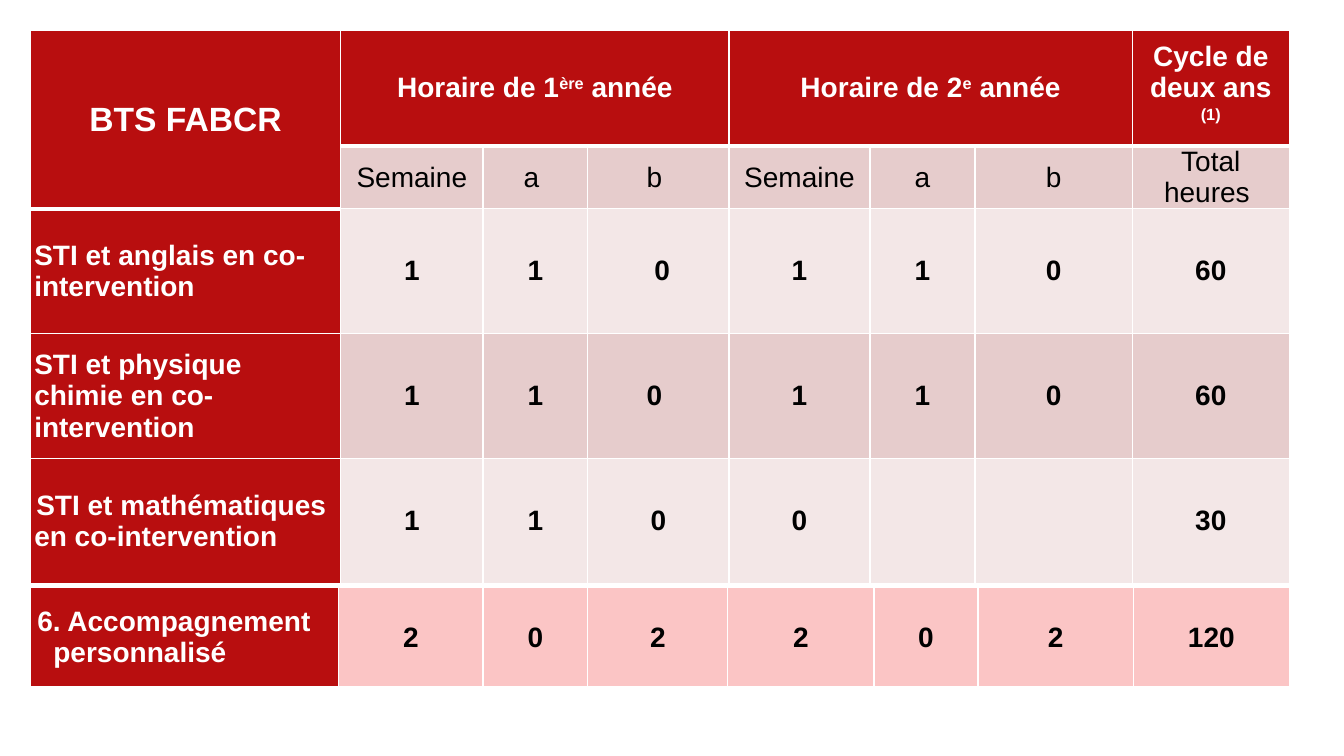
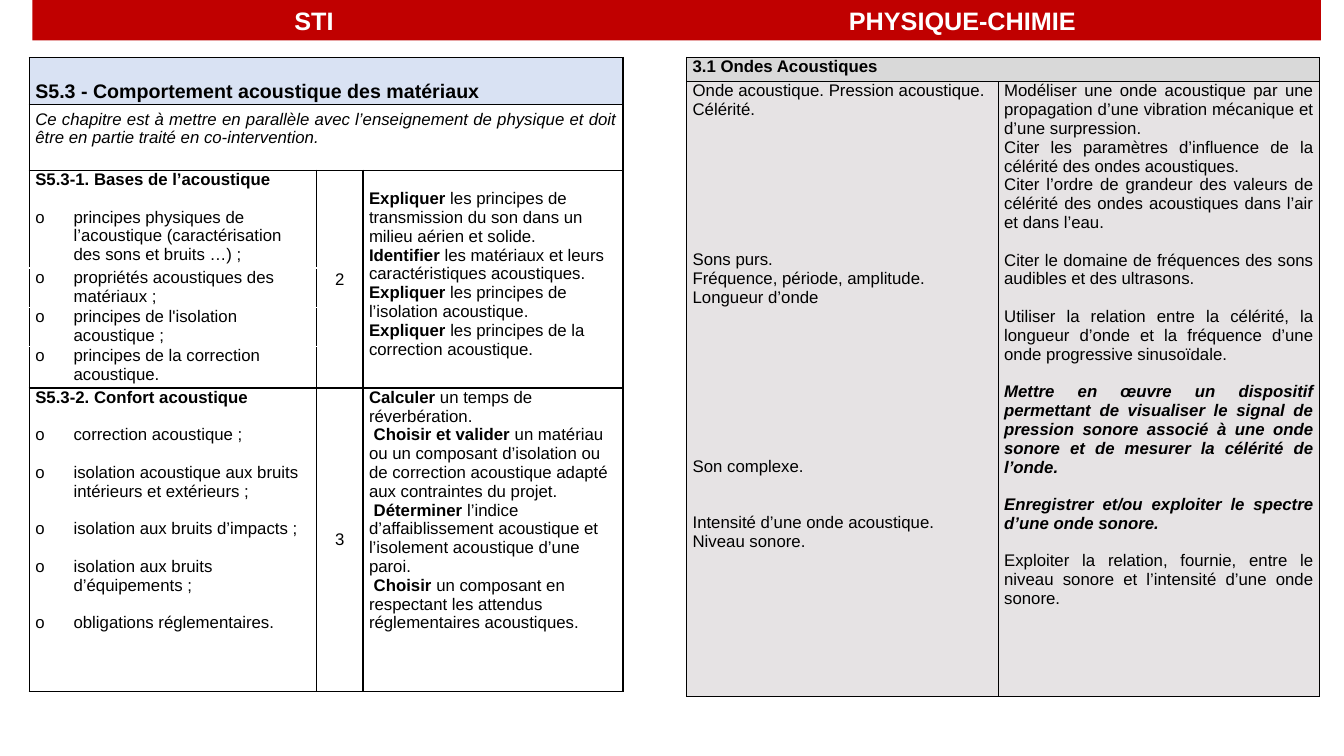
from dataclasses import dataclass, field
from typing import Optional

from lxml.etree import SubElement
from pptx import Presentation
from pptx.dml.color import RGBColor
from pptx.enum.text import MSO_ANCHOR, MSO_AUTO_SIZE, PP_ALIGN
from pptx.oxml.ns import qn
from pptx.util import Emu, Pt

PX = 9144  # EMU per px, 100 px to the inch
LEFT, CENTER, JUSTIFY = PP_ALIGN.LEFT, PP_ALIGN.CENTER, PP_ALIGN.JUSTIFY
TOP, MIDDLE, BOTTOM = MSO_ANCHOR.TOP, MSO_ANCHOR.MIDDLE, MSO_ANCHOR.BOTTOM


@dataclass(frozen=True)
class Theme:
    font: str = "Arial"
    white: str = "FFFFFF"
    black: str = "000000"
    band: str = "C00000"
    red: str = "B80E0F"
    rose: str = "E6CCCC"
    pale: str = "F3E7E7"
    pink: str = "FBC5C5"
    blue: str = "D9E2F3"
    grey: str = "D9D9D9"
    light: str = "E6E3E4"
    body: int = 12
    chapter: int = 14
    title: int = 18
    hours: int = 20
    course: int = 24
    line: float = 1.117  # line height of the font, in ems


T = Theme()


@dataclass
class Run:
    text: str
    bold: bool = False
    italic: bool = False
    raised: bool = False


@dataclass
class Para:
    runs: list[Run]
    gap: int = 0  # lines of space before
    margin: int = 0
    indent: int = 0
    bullet: str = ""


@dataclass
class Cell:
    paras: list[Para] = field(default_factory=list)
    fill: str = T.white
    color: str = T.black
    size: int = T.body
    align: PP_ALIGN = LEFT
    anchor: MSO_ANCHOR = TOP
    pad_top: int = 0
    pad_bottom: int = 0
    span: tuple[int, int] = (1, 1)
    edges: dict[str, tuple[str, int]] = field(default_factory=dict)


@dataclass
class Grid:
    left: int
    top: int
    cols: list[int]
    rows: list[int]
    cells: list[list[Optional[Cell]]]
    pad: int
    border: str


def px(n: int) -> Emu:
    return Emu(n * PX)


def rich(text: str, gap: int = 0, italic: bool = False) -> Para:
    """Text between asterisks is bold."""
    parts = text.split("*")
    return Para([Run(t, n % 2 == 1, italic) for n, t in enumerate(parts) if t], gap)


def item(text: str, gap: int = 0) -> Para:
    return Para([Run(text)], gap, 38, -38, "o")


# Drawing
def style_run(r, run: Run, size: int, color: str) -> None:
    r.text = run.text
    f = r.font
    f.name, f.size, f.bold, f.italic = T.font, Pt(size), run.bold, run.italic
    f.color.rgb = RGBColor.from_string(color)
    if run.raised:
        r._r.get_or_add_rPr().set("baseline", "30000")


def write(tf, cell: Cell) -> None:
    for n, para in enumerate(cell.paras):
        p = tf.paragraphs[0] if n == 0 else tf.add_paragraph()
        p.alignment = cell.align
        p.space_before = Pt(round(para.gap * cell.size * T.line, 1))
        pPr = p._p.get_or_add_pPr()
        pPr.set("marL", str(px(para.margin)))
        pPr.set("indent", str(px(para.indent)))
        if para.bullet:
            SubElement(pPr, qn("a:buFont")).set("typeface", T.font)
            SubElement(pPr, qn("a:buChar")).set("char", para.bullet)
        for run in para.runs:
            style_run(p.add_run(), run, cell.size, cell.color)


def draw_edges(tc, cell: Cell, color: str) -> None:
    tcPr = tc._tc.get_or_add_tcPr()
    for side in "LRTB":
        shade, width = cell.edges.get(side, (color, 1))
        ln = SubElement(tcPr, qn(f"a:ln{side}"), w=str(Pt(width)))
        SubElement(SubElement(ln, qn("a:solidFill")), qn("a:srgbClr")).set("val", shade)


def style_cell(tc, cell: Cell, grid: Grid) -> None:
    tc.margin_left = tc.margin_right = px(grid.pad)
    tc.margin_top, tc.margin_bottom = px(cell.pad_top), px(cell.pad_bottom)
    tc.vertical_anchor = cell.anchor
    draw_edges(tc, cell, grid.border)
    tc.fill.solid()
    tc.fill.fore_color.rgb = RGBColor.from_string(cell.fill)


def draw_grid(s, grid: Grid) -> None:
    frame = s.shapes.add_table(len(grid.rows), len(grid.cols), px(grid.left), px(grid.top),
                               px(sum(grid.cols)), px(sum(grid.rows)))
    table = frame.table
    table.first_row = table.horz_banding = False
    for col, width in zip(table.columns, grid.cols):
        col.width = px(width)
    for row, height in zip(table.rows, grid.rows):
        row.height = px(height)
    for y, line in enumerate(grid.cells):
        for x, cell in enumerate(line):
            if cell is None:
                continue
            down, across = cell.span
            for dy in range(down):
                for dx in range(across):
                    tc = table.cell(y + dy, x + dx)
                    style_cell(tc, cell, grid)
                    if dy or dx or not cell.paras:
                        end = SubElement(tc.text_frame.paragraphs[0]._p, qn("a:endParaRPr"))
                        end.set("sz", str(cell.size * 100))
            if cell.span != (1, 1):
                table.cell(y, x).merge(table.cell(y + down - 1, x + across - 1))
            write(table.cell(y, x).text_frame, cell)


def draw_title(s, text: str, tabs: list[int]) -> None:
    sp = s.shapes.title
    sp.left, sp.top, sp.width, sp.height = px(32), px(0), px(1278), px(40)
    sp.fill.solid()
    sp.fill.fore_color.rgb = RGBColor.from_string(T.band)
    tf = sp.text_frame
    tf.word_wrap, tf.auto_size, tf.vertical_anchor = True, MSO_AUTO_SIZE.NONE, MIDDLE
    p = tf.paragraphs[0]
    p.alignment = LEFT
    stops = SubElement(p._p.get_or_add_pPr(), qn("a:tabLst"))
    for pos in tabs:
        SubElement(stops, qn("a:tab"), pos=str(px(pos)), algn="l")
    style_run(p.add_run(), Run(text, bold=True), T.title, T.white)


# Slide 1: weekly hours
def head(paras: list[Para], size: int = T.hours, span: tuple[int, int] = (1, 1)) -> Cell:
    return Cell(paras, T.red, T.white, size, CENTER, MIDDLE, span=span,
                edges={"B": (T.white, 3)})


def year(number: str, suffix: str) -> Cell:
    return head([Para([Run(f"Horaire de {number}", True), Run(suffix, True, raised=True),
                       Run(" année", True)])], span=(1, 3))


def hours(text: str, fill: str, bold: bool = True) -> Cell:
    paras = [Para([Run(text, bold)])] if text else []
    return Cell(paras, fill, size=T.hours, align=CENTER, anchor=MIDDLE)


def subject(text: str, margin: int = 0, indent: int = 0) -> Cell:
    return Cell([Para([Run(text, True)], 0, margin, indent)], T.red, T.white, T.hours,
                anchor=MIDDLE)


def hours_row(label: Cell, values: list[str], fill: str) -> list[Optional[Cell]]:
    return [label] + [hours(v, fill) for v in values]


def hours_slide(prs) -> None:
    s = prs.slides.add_slide(prs.slide_layouts[6])
    cycle = head([rich("*Cycle de deux ans*"), Para([Run("(1)", True, raised=True)])])
    units = ["Semaine", "a ", "b ", "Semaine", "a", "b", "Total heures "]
    cells = [
        [head([rich("*BTS FABCR*")], T.course, (2, 1)),
         year("1", "ère"), None, None, year("2", "e"), None, None, cycle],
        [None] + [hours(u, T.rose, False) for u in units],
        hours_row(subject("STI et anglais en co-intervention"),
                  ["1", "1", " 0", "1", "1", "0", "60"], T.pale),
        hours_row(subject("STI et physique chimie en co-intervention"),
                  ["1", "1", "0 ", "1", "1", "0", "60"], T.rose),
        hours_row(subject("STI et mathématiques en co-intervention", indent=2),
                  ["1", "1", "0", "0", "", "", "30"], T.pale),
    ]
    draw_grid(s, Grid(30, 30, [308, 141, 104, 140, 140, 104, 156, 156],
                      [115, 61, 124, 124, 124], cells, 4, T.white))
    support = hours_row(subject("6. Accompagnement personnalisé", 16, -16),
                        ["2", "0", "2", "2", "0", "2", "120"], T.pink)
    for cell in support:
        cell.edges = {"B": (T.white, 3)}
    draw_grid(s, Grid(30, 583, [306, 143, 104, 139, 145, 103, 154, 155], [99],
                      [support], 7, T.white))


# Slide 2: the two syllabuses side by side
def syllabus_slide(prs) -> None:
    s = prs.slides.add_slide(prs.slide_layouts[5])
    draw_title(s, "\tSTI\tPHYSIQUE-CHIMIE", [250, 800])

    hidden = (T.white, 1)
    basics = [
        [rich("*S5.3-1. Bases de l’acoustique*"),
         item("principes physiques de l’acoustique (caractérisation des sons et bruits …) ;", 1)],
        [item("propriétés acoustiques des matériaux ;")],
        [item("principes de l'isolation acoustique ;")],
        [item("principes de la correction acoustique.")],
    ]
    topics = []
    for n, paras in enumerate(basics):
        edges = {"T": hidden} if n else {}
        if n < len(basics) - 1:
            edges["B"] = hidden
        topics.append(Cell(paras, edges=edges))
    basics_skills = Cell([
        rich("*Expliquer* les principes de transmission du son dans un milieu aérien et solide."),
        rich("*Identifier *les matériaux et leurs caractéristiques acoustiques."),
        rich("*Expliquer* les principes de l’isolation acoustique."),
        rich("*Expliquer *les principes de la correction acoustique."),
    ], pad_top=19, span=(4, 1))
    comfort = Cell([rich("*S5.3-2. Confort acoustique*")] + [item(t, 1) for t in (
        "correction acoustique ;",
        "isolation acoustique aux bruits intérieurs et extérieurs ;",
        "isolation aux bruits d’impacts ;",
        "isolation aux bruits d’équipements ;",
        "obligations réglementaires.")])
    comfort_skills = Cell([
        rich("*Calculer *un temps de réverbération."),
        rich(" *Choisir et valider *un matériau ou un composant d’isolation ou de correction "
             "acoustique adapté aux contraintes du projet."),
        rich(" *Déterminer *l’indice d’affaiblissement acoustique et l’isolement acoustique "
             "d’une paroi."),
        rich(" *Choisir *un composant en respectant les attendus réglementaires acoustiques."),
    ])
    chapter = Cell([rich("*S5.3 - Comportement acoustique des matériaux*")], T.blue,
                   size=T.chapter, anchor=BOTTOM, pad_bottom=2, span=(1, 3))
    intro = Cell([rich("Ce chapitre est à mettre en parallèle avec l’enseignement de physique et "
                       "doit être en partie traité en co-intervention.", italic=True)],
                 align=JUSTIFY, pad_top=5, span=(1, 3))

    def level(text: str, rows: int) -> Cell:
        return Cell([rich(text)], align=CENTER, anchor=MIDDLE, span=(rows, 1))

    cells = [[chapter, None, None], [intro, None, None],
             [topics[0], level("2", 4), basics_skills],
             *[[topic, None, None] for topic in topics[1:]],
             [comfort, level("3", 1), comfort_skills]]
    draw_grid(s, Grid(29, 57, [285, 46, 258], [47, 65, 97, 39, 39, 41, 301],
                      cells, 6, T.black))

    notions = Cell([
        rich("Onde acoustique. Pression acoustique."),
        rich("Célérité."),
        rich("Sons purs.", 7),
        rich("Fréquence, période, amplitude."),
        rich("Longueur d’onde"),
        rich("Son complexe.", 8),
        rich("Intensité d’une onde acoustique.", 2),
        rich("Niveau sonore."),
    ], T.light)
    abilities = Cell([
        rich("Modéliser une onde acoustique par une propagation d’une vibration mécanique et "
             "d’une surpression."),
        rich("Citer les paramètres d’influence de la célérité des ondes acoustiques."),
        rich("Citer l’ordre de grandeur des valeurs de célérité des ondes acoustiques dans l’air "
             "et dans l’eau."),
        rich("Citer le domaine de fréquences des sons audibles et des ultrasons.", 1),
        rich("Utiliser la relation entre la célérité, la longueur d’onde et la fréquence d’une "
             "onde progressive sinusoïdale.", 1),
        rich("*Mettre en œuvre un dispositif permettant de visualiser le signal de pression "
             "sonore associé à une onde sonore et de mesurer la célérité de l’onde.*", 1, True),
        rich("*Enregistrer et/ou exploiter le spectre d’une onde sonore.*", 1, True),
        rich("Exploiter la relation, fournie, entre le niveau sonore et l’intensité d’une onde "
             "sonore.", 1),
    ], T.light, align=JUSTIFY)
    waves = Cell([rich("*3.1 Ondes Acoustiques*")], T.grey, span=(1, 2))
    draw_grid(s, Grid(681, 57, [309, 319], [24, 610],
                      [[waves, None], [notions, abilities]], 6, T.black))


def main() -> None:
    prs = Presentation()
    prs.slide_width, prs.slide_height = px(1333), px(750)
    hours_slide(prs)
    syllabus_slide(prs)
    prs.save("out.pptx")


if __name__ == "__main__":
    main()
